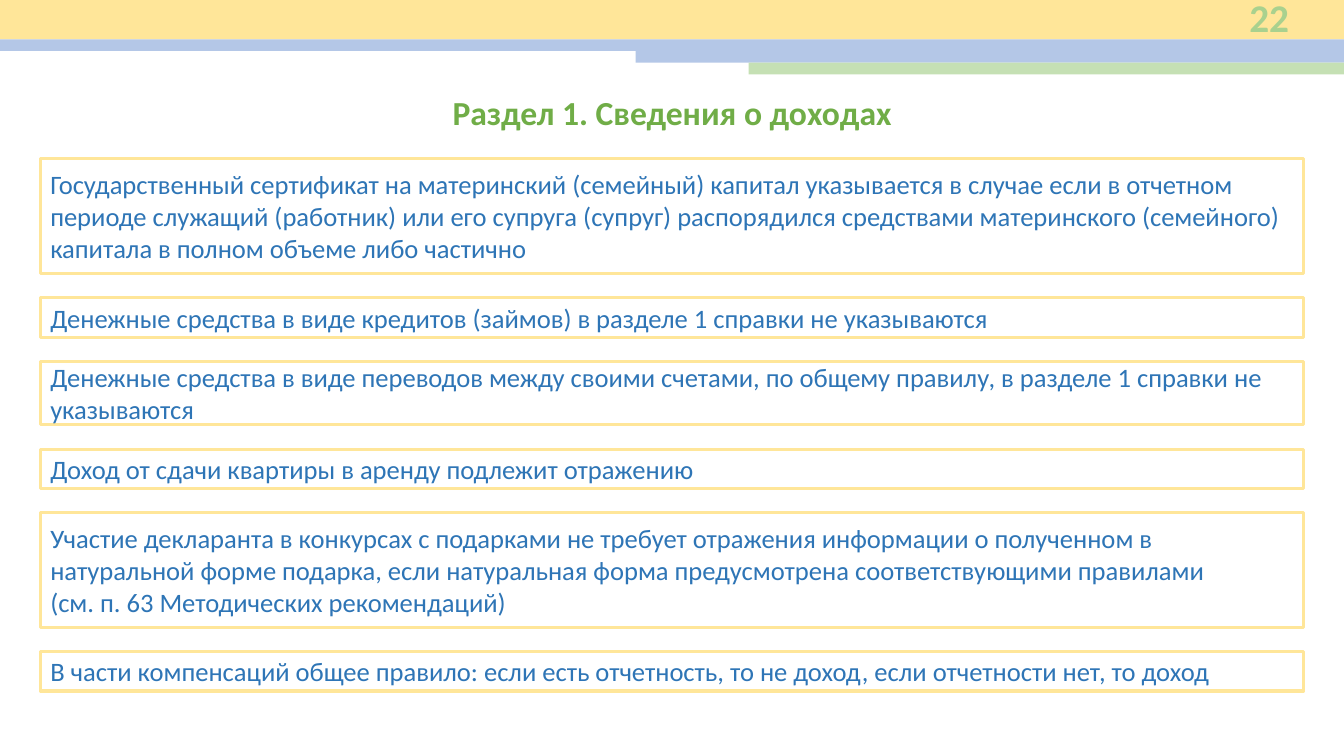
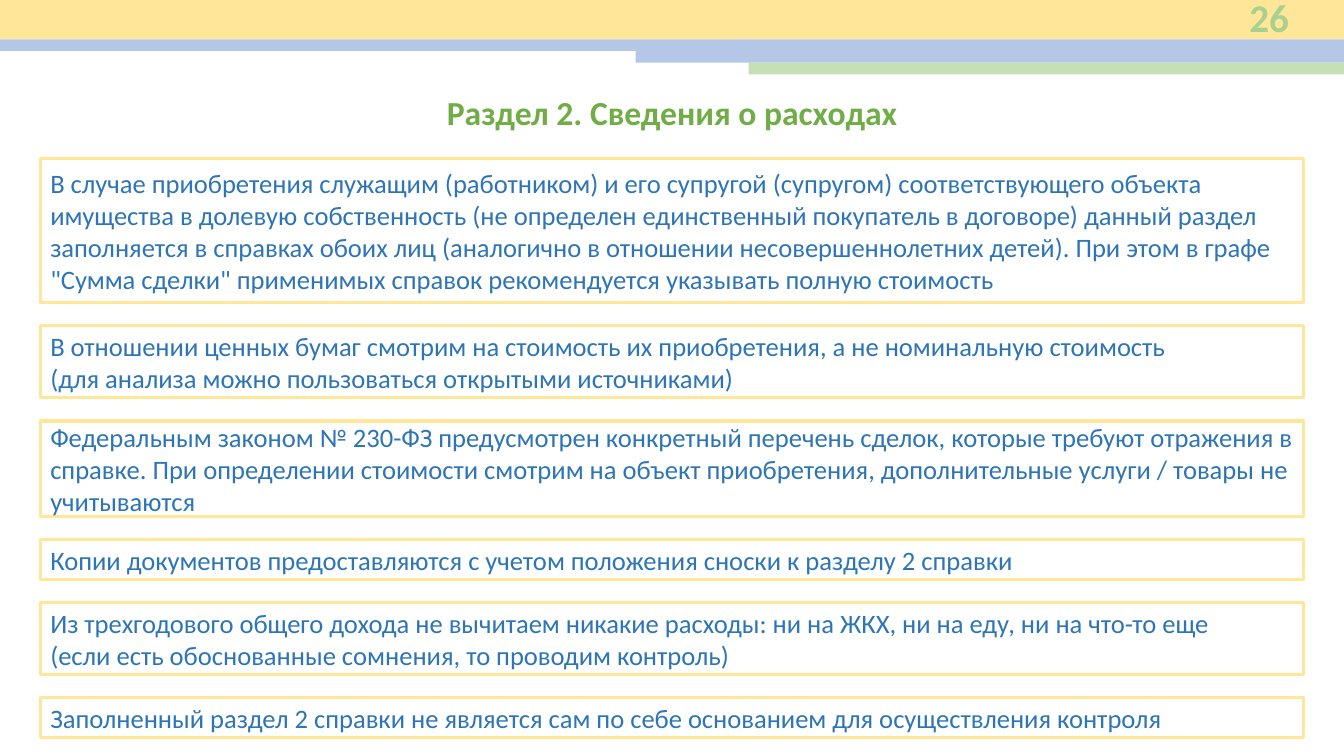
import pptx
import pptx.dml.color
import pptx.enum.shapes
import pptx.enum.text
import pptx.util

RGBColor = pptx.dml.color.RGBColor
Align = pptx.enum.text.PP_ALIGN
Anchor = pptx.enum.text.MSO_ANCHOR
RECTANGLE = pptx.enum.shapes.MSO_SHAPE.RECTANGLE

YELLOW = RGBColor(0xFF, 0xE6, 0x99)
LIGHT_BLUE = RGBColor(0xB4, 0xC7, 0xE7)
LIGHT_GREEN = RGBColor(0xC5, 0xE0, 0xB4)
NUMBER_GREEN = RGBColor(0xA9, 0xD1, 0x8E)
TITLE_GREEN = RGBColor(0x70, 0xAD, 0x47)
TEXT_BLUE = RGBColor(0x2E, 0x75, 0xB6)

FONT = "Calibri"
PAGE_WIDTH = pptx.util.Inches(13.33)
PAGE_HEIGHT = pptx.util.Inches(7.5)

# Lengths below are percentages of the slide's width or height.
BAND_HEIGHT = 5.2
STRIPE_HEIGHT = 1.55
STRIPES = [(0, LIGHT_BLUE), (47.3, LIGHT_BLUE), (55.7, LIGHT_GREEN)]
NOTE_LEFT, NOTE_TOP, NOTE_WIDTH = 3, 21, 94

INCOME_NOTES = [
    (15.2, "Государственный сертификат на материнский (семейный) капитал указывается "
           "в случае если в отчетном периоде служащий (работник) или его супруга (супруг) "
           "распорядился средствами материнского (семейного) капитала в полном объеме "
           "либо частично"),
    (5.2, "Денежные средства в виде кредитов (займов) в разделе 1 справки не указываются"),
    (8.4, "Денежные средства в виде переводов между своими счетами, по общему правилу, "
          "в разделе 1 справки не указываются"),
    (5.2, "Доход от сдачи квартиры в аренду подлежит отражению"),
    (15.2, "Участие декларанта в конкурсах с подарками не требует отражения информации "
           "о полученном в натуральной форме подарка, если натуральная форма предусмотрена "
           "соответствующими правилами\n(см. п. 63 Методических рекомендаций)"),
    (5.2, "В части компенсаций общее правило: если есть отчетность, то не доход, "
          "если отчетности нет, то доход"),
]

EXPENSE_NOTES = [
    (19, "В случае приобретения служащим (работником) и его супругой (супругом) "
         "соответствующего объекта имущества в долевую собственность (не определен "
         "единственный покупатель в договоре) данный раздел заполняется в справках обоих "
         "лиц (аналогично в отношении несовершеннолетних детей). При этом в графе "
         "\"Сумма сделки\" применимых справок рекомендуется указывать полную стоимость"),
    (9.5, "В отношении ценных бумаг смотрим на стоимость их приобретения, "
          "а не номинальную стоимость\n"
          "(для анализа можно пользоваться открытыми источниками)"),
    (12.6, "Федеральным законом № 230-ФЗ предусмотрен конкретный перечень сделок, которые "
           "требуют отражения в справке. При определении стоимости смотрим на объект "
           "приобретения, дополнительные услуги / товары не учитываются"),
    (5.2, "Копии документов предоставляются с учетом положения сноски к разделу 2 справки"),
    (9.5, "Из трехгодового общего дохода не вычитаем никакие расходы: ни на ЖКХ, "
          "ни на еду, ни на что-то еще\n"
          "(если есть обоснованные сомнения, то проводим контроль)"),
    (5.2, "Заполненный раздел 2 справки не является сам по себе основанием "
          "для осуществления контроля"),
]


def area(left, top, width, height):
    return (round(PAGE_WIDTH * left / 100), round(PAGE_HEIGHT * top / 100),
            round(PAGE_WIDTH * width / 100), round(PAGE_HEIGHT * height / 100))


def write(box, text, size, color, align, anchor, bold=False):
    frame = box.text_frame
    frame.word_wrap = True
    frame.vertical_anchor = anchor
    frame.text = text
    for para in frame.paragraphs:
        para.alignment = align
        for span in para.runs:
            span.font.name = FONT
            span.font.size = pptx.util.Pt(size)
            span.font.bold = bold
            span.font.color.rgb = color


def add_band(group, left, top, height, color):
    band = group.shapes.add_shape(RECTANGLE, *area(left, top, 100 - left, height))
    band.shadow.inherit = False
    band.fill.solid()
    band.fill.fore_color.rgb = color
    band.line.fill.background()


def add_header(page, number, title):
    group = page.shapes.add_group_shape()
    add_band(group, 0, 0, BAND_HEIGHT, YELLOW)
    for row, (left, color) in enumerate(STRIPES):
        add_band(group, left, BAND_HEIGHT + row * STRIPE_HEIGHT, STRIPE_HEIGHT, color)
    number_box = page.shapes.add_textbox(*area(87.25, -0.7, 9.4, 5.9))
    write(number_box, number, 28, NUMBER_GREEN, Align.RIGHT, Anchor.MIDDLE, bold=True)
    title_box = page.shapes.add_textbox(*area(4.5, 11.5, 91, 6.7))
    write(title_box, title, 24, TITLE_GREEN, Align.CENTER, Anchor.TOP, bold=True)


def add_note(page, top, height, text):
    box = page.shapes.add_shape(RECTANGLE, *area(NOTE_LEFT, top, NOTE_WIDTH, height))
    box.shadow.inherit = False
    box.fill.background()
    box.line.color.rgb = YELLOW
    box.line.width = pptx.util.Pt(2.25)
    write(box, text, 19, TEXT_BLUE, Align.LEFT, Anchor.MIDDLE)


def add_page(deck, number, title, notes, gap):
    page = deck.slides.add_slide(deck.slide_layouts[6])
    add_header(page, number, title)
    top = NOTE_TOP
    for height, text in notes:
        add_note(page, top, height, text)
        top += height + gap


def main():
    deck = pptx.Presentation()
    deck.slide_width, deck.slide_height = PAGE_WIDTH, PAGE_HEIGHT
    add_page(deck, "22", "Раздел 1. Сведения о доходах", INCOME_NOTES, 3.2)
    add_page(deck, "26", "Раздел 2. Сведения о расходах", EXPENSE_NOTES, 3.1)
    deck.save("out.pptx")


if __name__ == "__main__":
    main()
